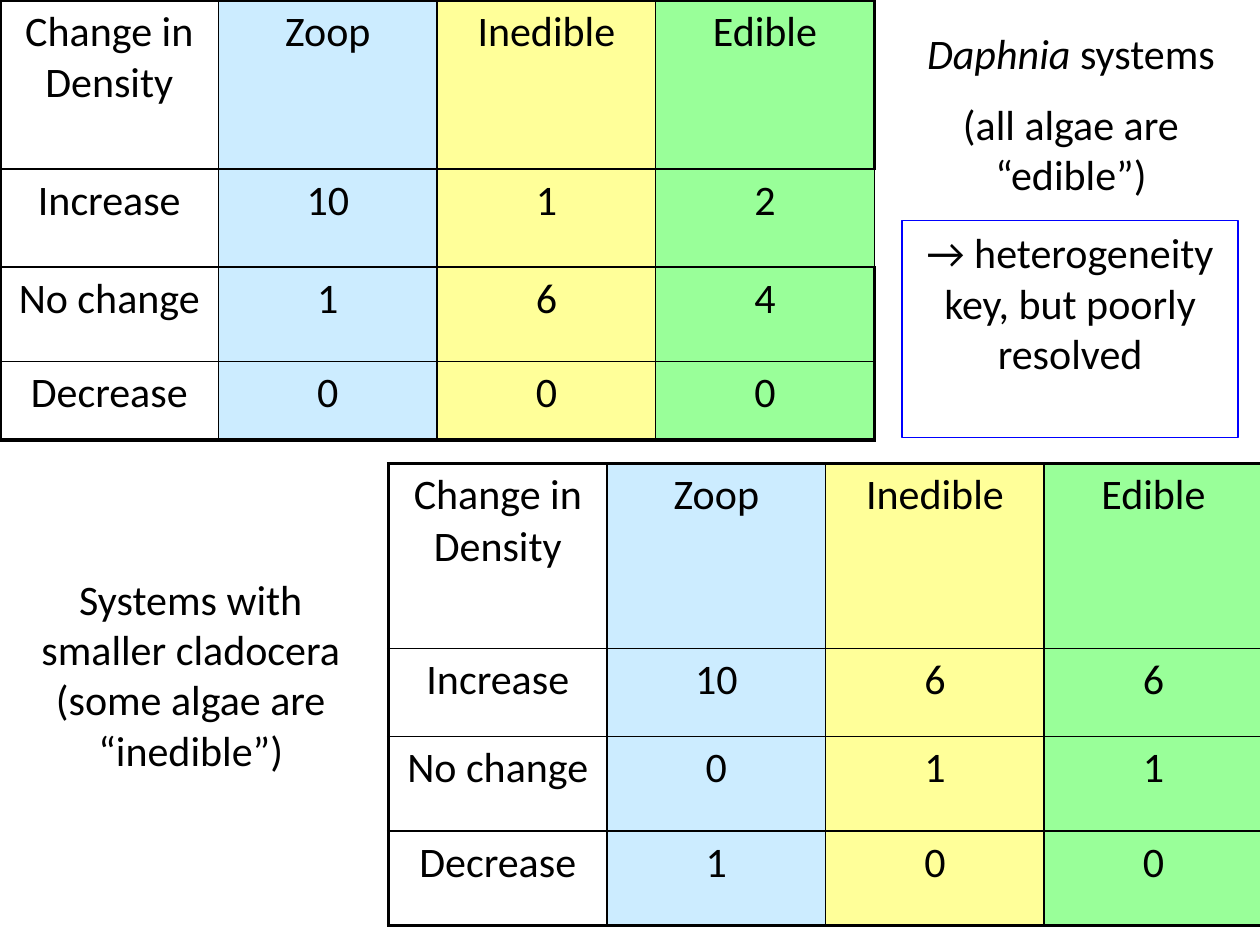
from lxml import etree
from pptx import Presentation
from pptx import util as u
from pptx.dml.color import RGBColor
from pptx.enum import shapes, text
from pptx.oxml import ns

BLACK = RGBColor(0x00, 0x00, 0x00)
WHITE = RGBColor(0xFF, 0xFF, 0xFF)
BLUE = RGBColor(0x00, 0x00, 0xFF)
COLUMN_FILLS = [
    WHITE,
    RGBColor(0xCC, 0xEC, 0xFF),
    RGBColor(0xFF, 0xFF, 0x99),
    RGBColor(0x99, 0xFF, 0x99),
]
HEADINGS = ["Change in Density", "Zoop", "Inedible", "Edible"]
CHANGES = ["Increase", "No change", "Decrease"]
DAPHNIA_COUNTS = [[10, 1, 2], [1, 6, 4], [0, 0, 0]]
CLADOCERA_COUNTS = [[10, 6, 6], [0, 1, 1], [1, 0, 0]]
COLUMN_WIDTH = 124.9
THIN, THICK = 1, 2.25


def format_paragraph(paragraph, percent_before):
    """Centre a paragraph, space it by a share of its line and style its runs."""
    paragraph.alignment = text.PP_ALIGN.CENTER
    paragraph.space_before = u.Pt(0)
    spacing = paragraph._p.pPr.find(ns.qn("a:spcBef"))
    spacing.remove(spacing[0])
    etree.SubElement(spacing, ns.qn("a:spcPct"), val=str(percent_before * 1000))
    for run in paragraph.runs:
        run.font.name = "Calibri"
        run.font.size = u.Pt(24)
        run.font.color.rgb = BLACK


def set_borders(cell, widths):
    """Draw the left, right, top and bottom borders of a cell in black."""
    properties = cell._tc.get_or_add_tcPr()
    for index, (side, width) in enumerate(zip("LRTB", widths)):
        line = etree.Element(ns.qn(f"a:ln{side}"), w=str(u.Pt(width)))
        fill = etree.SubElement(line, ns.qn("a:solidFill"))
        etree.SubElement(fill, ns.qn("a:srgbClr"), val=str(BLACK))
        properties.insert(index, line)


def add_density_table(slide, left, top, row_heights, counts):
    """Add a table of density changes with coloured columns and a thick frame."""
    rows = [HEADINGS] + [[change, *values] for change, values in zip(CHANGES, counts)]
    last = len(HEADINGS) - 1
    frame = slide.shapes.add_table(
        len(rows), len(HEADINGS), u.Pt(left), u.Pt(top),
        u.Pt(COLUMN_WIDTH * len(HEADINGS)), u.Pt(sum(row_heights)))
    table = frame.table
    table.first_row = table.horz_banding = False
    for column in table.columns:
        column.width = u.Pt(COLUMN_WIDTH)
    for row_index, (values, height) in enumerate(zip(rows, row_heights)):
        table.rows[row_index].height = u.Pt(height)
        for column_index, value in enumerate(values):
            cell = table.cell(row_index, column_index)
            cell.text_frame.text = str(value)
            format_paragraph(cell.text_frame.paragraphs[0], 20)
            cell.fill.solid()
            cell.fill.fore_color.rgb = COLUMN_FILLS[column_index]
            thick_sides = [
                column_index == 0,
                column_index == last and row_index != 1,
                row_index == 0,
                row_index == len(rows) - 1,
            ]
            set_borders(cell, [THICK if thick else THIN for thick in thick_sides])


def fill_text(shape, lines):
    """Write centred, wrapped lines from the top of a shape."""
    frame = shape.text_frame
    frame.text = "\n".join(lines)
    frame.word_wrap = True
    frame.auto_size = text.MSO_AUTO_SIZE.SHAPE_TO_FIT_TEXT
    frame.vertical_anchor = text.MSO_ANCHOR.TOP
    for paragraph in frame.paragraphs:
        format_paragraph(paragraph, 50)


def add_label(slide, left, top, width, height, lines):
    """Add a plain text box and return it."""
    label = slide.shapes.add_textbox(u.Pt(left), u.Pt(top), u.Pt(width), u.Pt(height))
    fill_text(label, lines)
    return label


def add_conclusion(slide, left, top, width, height, line):
    """Add a blue-outlined rectangle with a conclusion."""
    shape = slide.shapes.add_shape(
        shapes.MSO_SHAPE.RECTANGLE, u.Pt(left), u.Pt(top), u.Pt(width), u.Pt(height))
    shape.shadow.inherit = False
    shape.fill.background()
    shape.line.color.rgb = BLUE
    shape.line.width = u.Pt(0.75)
    fill_text(shape, [line])


def main():
    """Build and save the slide."""
    presentation = Presentation()
    presentation.slide_width, presentation.slide_height = u.Pt(720), u.Pt(540)
    slide = presentation.slides.add_slide(presentation.slide_layouts[6])

    add_density_table(slide, 0, 0, [96.5, 56, 54, 45], DAPHNIA_COUNTS)
    add_density_table(slide, 222, 265, [105.5, 50.5, 54, 54], CLADOCERA_COUNTS)

    daphnia = add_label(slide, 504, 12, 216, 109,
                        ["Daphnia", "(all algae are “edible”)"])
    genus = daphnia.text_frame.paragraphs[0]
    genus.runs[0].font.italic = True
    genus.add_run().text = " systems"
    format_paragraph(genus, 50)

    add_label(slide, 7, 324, 204, 124,
              ["Systems with smaller cladocera (some algae are “inedible”)"])
    add_conclusion(slide, 515.5, 126, 192, 124,
                   "→ heterogeneity key, but poorly resolved")
    presentation.save("out.pptx")


if __name__ == "__main__":
    main()
